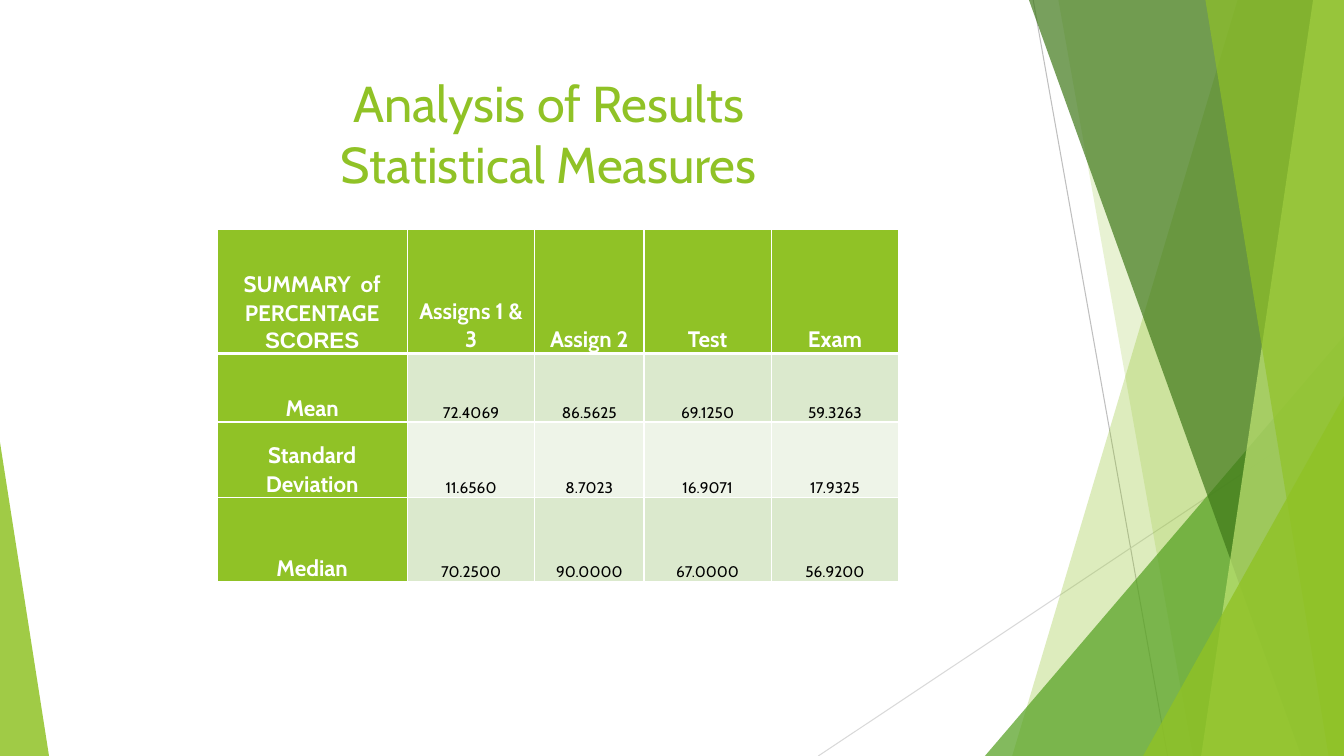
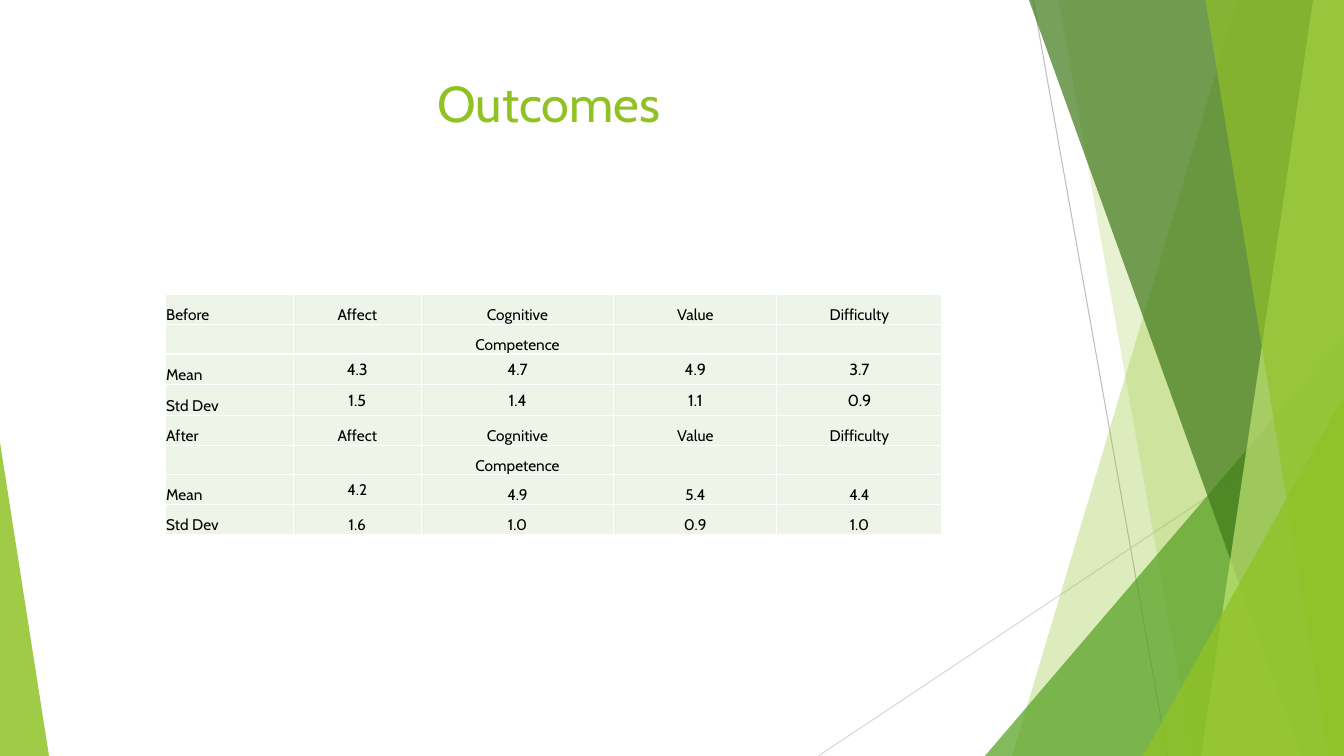
from dataclasses import dataclass
from typing import Callable, NamedTuple

from lxml.etree import SubElement
from pptx import Presentation
from pptx.dml.color import RGBColor
from pptx.enum.shapes import MSO_CONNECTOR as Connector, MSO_SHAPE as Preset
from pptx.enum.text import MSO_ANCHOR as Anchor, PP_ALIGN as Align
from pptx.oxml.ns import qn
from pptx.util import Pt


@dataclass(frozen=True)
class Theme:
    lime: str = "90C226"
    leaf: str = "54A021"
    forest: str = "3F7819"
    pale: str = "C0E474"
    band: str = "DBE9CD"
    light_band: str = "EEF4E8"
    white: str = "FFFFFF"
    black: str = "000000"
    gray: str = "BFBFBF"
    light_gray: str = "D9D9D9"
    font: str = "Cabin"
    fallback_font: str = "Arial"
    title_size: float = 36
    heading_size: float = 16
    figure_size: float = 11.5
    body_size: float = 11
    hairline: float = 0.75
    border: float = 1
    header_border: float = 3


THEME = Theme()
WIDTH, HEIGHT = 960, 540


class Ray(NamedTuple):
    start: tuple[float, float]
    end: tuple[float, float]
    color: str


class Facet(NamedTuple):
    top_x: float
    bottom_x: float
    right_top: float
    color: str
    opacity: int


class Triangle(NamedTuple):
    left: float
    top: float
    width: float
    apex: float
    color: str
    opacity: int


class CellStyle(NamedTuple):
    size: float
    color: str
    fill: str
    bold: bool = False
    align: Align = Align.CENTER
    anchor: Anchor = Anchor.BOTTOM


class Span(NamedTuple):
    text: str
    font: str = THEME.font


@dataclass(frozen=True)
class Grid:
    left: float
    top: float
    columns: tuple[float, ...]
    rows: tuple[float, ...]
    margins: tuple[float, float, float, float]
    style: Callable[[int, int], CellStyle]
    texts: list[list[str]]
    line_spacing: float = 1.0
    header_border: float = THEME.border


RAYS = (
    Ray((738, 0), (834, HEIGHT), THEME.gray),
    Ray((WIDTH, 290), (584.5, HEIGHT), THEME.light_gray),
)
FACETS = (
    Facet(884, 723, 0, THEME.lime, 30),
    Facet(756, 852, 0, THEME.lime, 20),
    Triangle(703.5, 240, 256.5, 1, THEME.leaf, 72),
    Facet(735, 929.5, 0, THEME.forest, 70),
    Facet(938, 858, 0, THEME.pale, 70),
    Facet(861, 949, 0, THEME.lime, 65),
    Triangle(816.5, 283, 143.5, 1, THEME.lime, 80),
    Triangle(0, 316, 35, 0, THEME.lime, 85),
)


def rgb(color: str) -> RGBColor:
    return RGBColor.from_string(color)


def draw_ray(page, ray: Ray) -> None:
    line = page.shapes.add_connector(Connector.STRAIGHT, *map(Pt, ray.start + ray.end))
    line.line.color.rgb = rgb(ray.color)
    line.line.width = Pt(THEME.hairline)
    SubElement(line.element.spPr, qn("a:effectLst"))


def draw_facet(page, facet: Facet | Triangle) -> None:
    if isinstance(facet, Triangle):
        shape = page.shapes.add_shape(
            Preset.ISOSCELES_TRIANGLE, Pt(facet.left), Pt(facet.top),
            Pt(facet.width), Pt(HEIGHT - facet.top))
        shape.adjustments[0] = facet.apex
    else:
        outline = page.shapes.build_freeform(Pt(facet.top_x), Pt(0))
        corners = ((WIDTH, facet.right_top), (WIDTH, HEIGHT), (facet.bottom_x, HEIGHT))
        outline.add_line_segments([(Pt(x), Pt(y)) for x, y in corners], close=True)
        shape = outline.convert_to_shape()
    shape.shadow.inherit = False
    shape.fill.solid()
    shape.fill.fore_color.rgb = rgb(facet.color)
    tint = shape.element.spPr.find(qn("a:solidFill")).find(qn("a:srgbClr"))
    SubElement(tint, qn("a:alpha"), val=str(facet.opacity * 1000))
    shape.line.fill.background()


def add_span(para, span: Span, size: float, color: str, bold: bool = False) -> None:
    run = para.add_run()
    run.text = span.text
    run.font.name = span.font
    run.font.size = Pt(size)
    run.font.bold = bold
    run.font.color.rgb = rgb(color)


def add_title(page, lines: list[str]) -> None:
    box = page.shapes.add_textbox(Pt(53.5), Pt(48), Pt(677), Pt(104))
    box.text_frame.word_wrap = True
    para = box.text_frame.paragraphs[0]
    para.alignment = Align.CENTER
    for index, line in enumerate(lines):
        if index:
            para.add_line_break()
        add_span(para, Span(line), THEME.title_size, THEME.lime)


def add_borders(cell, top: float, bottom: float) -> None:
    properties = cell._tc.get_or_add_tcPr()
    widths = {"L": THEME.border, "R": THEME.border, "T": top, "B": bottom}
    for side, width in widths.items():
        edge = SubElement(properties, qn(f"a:ln{side}"), w=str(Pt(width)))
        SubElement(SubElement(edge, qn("a:solidFill")), qn("a:srgbClr"), val=THEME.white)


def fill_cell(cell, text: str, style: CellStyle, grid: Grid) -> None:
    cell.fill.solid()
    cell.fill.fore_color.rgb = rgb(style.fill)
    cell.vertical_anchor = style.anchor
    (cell.margin_left, cell.margin_top,
     cell.margin_right, cell.margin_bottom) = map(Pt, grid.margins)
    frame = cell.text_frame
    for index, line in enumerate(text.split("\n")):
        para = frame.add_paragraph() if index else frame.paragraphs[0]
        para.alignment = style.align
        para.line_spacing = grid.line_spacing
        if line:
            font = THEME.fallback_font if index else THEME.font
            add_span(para, Span(line, font), style.size, style.color, style.bold)
        else:
            SubElement(para._p, qn("a:endParaRPr"), sz=str(int(style.size * 100)))


def add_grid(page, grid: Grid) -> None:
    frame = page.shapes.add_table(
        len(grid.rows), len(grid.columns), Pt(grid.left), Pt(grid.top),
        Pt(sum(grid.columns)), Pt(sum(grid.rows)))
    table = frame.table
    table.first_row = table.horz_banding = False
    for column, width in zip(table.columns, grid.columns):
        column.width = Pt(width)
    for row, height in zip(table.rows, grid.rows):
        row.height = Pt(height)
    for r, texts in enumerate(grid.texts):
        top = grid.header_border if r == 1 else THEME.border
        bottom = grid.header_border if r == 0 else THEME.border
        for c, text in enumerate(texts):
            cell = table.cell(r, c)
            add_borders(cell, top, bottom)
            fill_cell(cell, text, grid.style(r, c), grid)


def measure_style(row: int, column: int) -> CellStyle:
    if row == 0 or column == 0:
        return CellStyle(THEME.heading_size, THEME.white, THEME.lime, bold=True)
    fill = THEME.band if row % 2 else THEME.light_band
    return CellStyle(THEME.body_size, THEME.black, fill)


def outcome_style(row: int, column: int) -> CellStyle:
    before_figure = row in (2, 3) and column > 0
    centered = before_figure or (row, column) == (6, 1)
    return CellStyle(
        THEME.figure_size if before_figure else THEME.body_size,
        THEME.black,
        THEME.light_band,
        align=Align.CENTER if column else Align.LEFT,
        anchor=Anchor.MIDDLE if centered else Anchor.BOTTOM)


def outcome_rows(period: str, means: list[str], deviations: list[str]) -> list[list[str]]:
    return [
        [period, "Affect", "Cognitive", "Value", "Difficulty"],
        ["", "", "Competence", "", ""],
        ["Mean", *means],
        ["Std Dev", *deviations],
    ]


MEASURES = Grid(
    left=155, top=164,
    columns=(136, 91, 78, 91, 91),
    rows=(88.5, 49, 54, 60),
    margins=(5, 0, 5, 0),
    style=measure_style,
    texts=[
        ["SUMMARY  of PERCENTAGE\nSCORES", "Assigns 1 & 3", "Assign 2", "Test", "Exam"],
        ["Mean", "72.4069", "86.5625", "69.1250", "59.3263"],
        ["Standard Deviation", "11.6560", "8.7023", "16.9071", "17.9325"],
        ["Median", "70.2500", "90.0000", "67.0000", "56.9200"],
    ],
    line_spacing=1.07,
    header_border=THEME.header_border)

OUTCOMES = Grid(
    left=118, top=210.5,
    columns=(91.5, 91.5, 137.5, 116.5, 118),
    rows=(21.2, 21.2, 22, 22, 21.2, 21.2, 21.2, 21.2),
    margins=(0.7, 0.7, 0.7, 0),
    style=outcome_style,
    texts=[
        *outcome_rows("Before", ["4.3", "4.7", "4.9", "3.7"], ["1.5", "1.4", "1.1", "0.9"]),
        *outcome_rows("After", ["4.2", "4.9", "5.4", "4.4"], ["1.6", "1.0", "0.9", "1.0"]),
    ])


def add_page(deck, title: list[str], grid: Grid) -> None:
    page = deck.slides.add_slide(deck.slide_layouts[6])
    for ray in RAYS:
        draw_ray(page, ray)
    for facet in FACETS:
        draw_facet(page, facet)
    add_title(page, title)
    add_grid(page, grid)


def main() -> None:
    deck = Presentation()
    deck.slide_width, deck.slide_height = Pt(WIDTH), Pt(HEIGHT)
    add_page(deck, ["Analysis of Results", "Statistical Measures"], MEASURES)
    add_page(deck, ["Outcomes"], OUTCOMES)
    deck.save("out.pptx")


if __name__ == "__main__":
    main()
